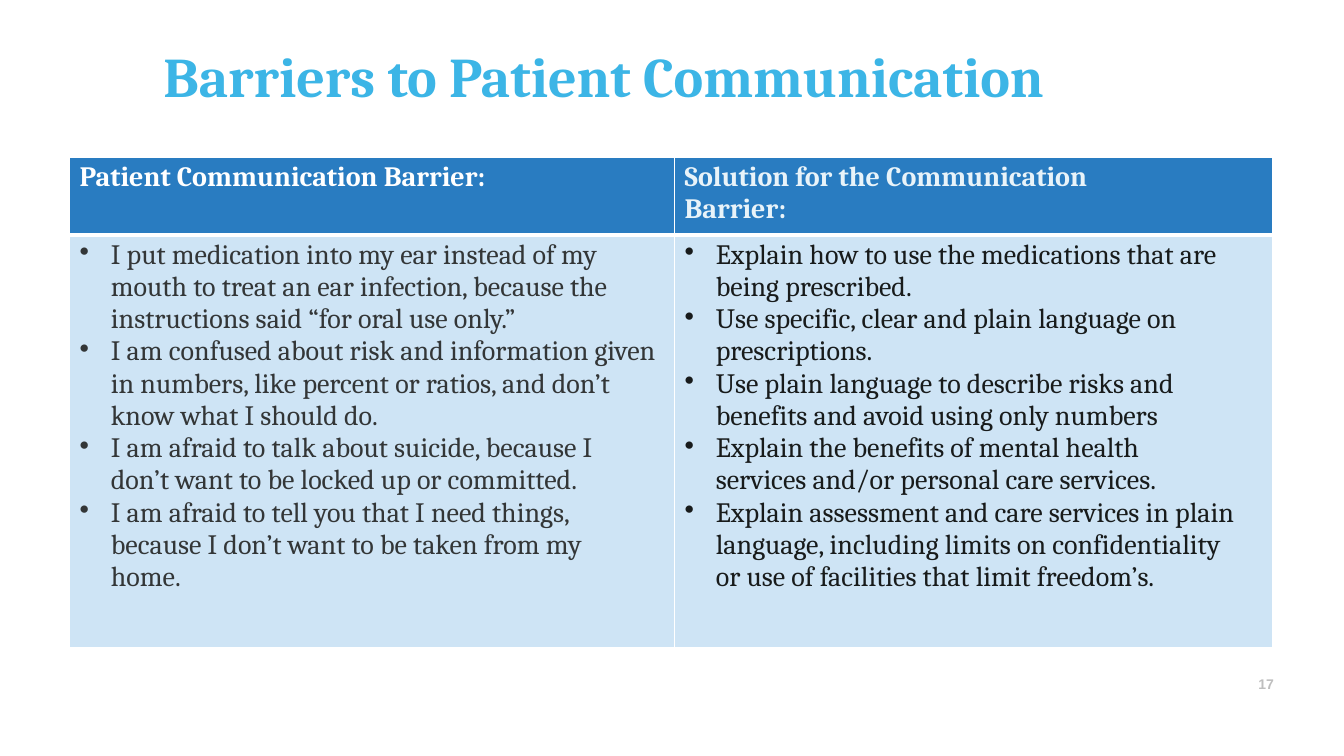
from pptx import Presentation
from pptx.dml.color import RGBColor as RGB
from pptx.oxml import parse_xml
from pptx.oxml.ns import nsdecls
from pptx.util import Inches, Pt

COLORS = {
    "title": "3CB5E6",
    "header": "297CC1",
    "body": "CEE4F5",
    "white": "FFFFFF",
    "pale": "E8F3F9",
    "barrier": "333637",
    "solution": "181B1B",
    "number": "BEBEBE",
}

BARRIERS = [
    ("I put medication into my ear instead of my mouth to treat an ear infection, "
     "because the instructions said “for oral use only.”", True, 0.3),
    ("I am confused about risk and information given in numbers, like percent or "
     "ratios, and don’t know what I should do.", True, 0.1),
    ("I am afraid to talk about suicide, because I don’t want to be locked up or "
     "committed.", True, 0.3),
    ("I am afraid to tell you that I need things, because I don’t want to be taken "
     "from my home.", True, 0.3),
]
SOLUTIONS = [
    ("Explain how to use the medications that are", True, 0),
    ("being prescribed.", False, 0),
    ("Use specific, clear and plain language on prescriptions.", True, 0.3),
    ("Use plain language to describe risks and", True, 0),
    ("benefits and avoid using only numbers", False, 0),
    ("Explain the benefits of mental health services and/or personal care services.",
     True, 0.5),
    ("Explain assessment and care services in plain language, including limits on "
     "confidentiality or use of facilities that limit freedom’s.", True, 0.3),
]


class SlideBuilder:
    font = "Cambria"
    text_indent = 0.41
    bullet_offset = -0.31

    def __init__(self, presentation):
        self.slide = presentation.slides.add_slide(presentation.slide_layouts[6])

    def run(self, paragraph, text, size, color, bold=False, font=None):
        run = paragraph.add_run()
        run.text = text
        run.font.name = font or self.font
        run.font.size = Pt(size)
        run.font.bold = bold
        run.font.color.rgb = RGB.from_string(COLORS[color])

    def indent(self, paragraph, left, right=0, bullet=False):
        properties = paragraph._p.get_or_add_pPr()
        properties.set("marL", str(Inches(left)))
        properties.set("marR", str(Inches(right)))
        properties.set("indent", str(Inches(self.bullet_offset if bullet else 0)))
        if bullet:
            properties.append(parse_xml(f'<a:buChar {nsdecls("a")} char="•"/>'))

    def text(self, text, box, inset_top, left, size, color, font=None):
        shape = self.slide.shapes.add_textbox(*map(Inches, box))
        frame = shape.text_frame
        frame.word_wrap = True
        frame.margin_left = frame.margin_right = frame.margin_bottom = 0
        frame.margin_top = Inches(inset_top)
        paragraph = frame.paragraphs[0]
        self.indent(paragraph, left)
        self.run(paragraph, text, size, color, True, font)

    def table(self, box, widths, heights):
        table = self.slide.shapes.add_table(
            len(heights), len(widths), *map(Inches, box)).table
        for column, width in zip(table.columns, widths):
            column.width = Inches(width)
        for row, height in zip(table.rows, heights):
            row.height = Inches(height)
        return table

    def borders(self, cell, top, bottom):
        properties = cell._tc.get_or_add_tcPr()
        sides = (("L", 1), ("R", 1), ("T", top), ("B", bottom))
        for position, (side, width) in enumerate(sides):
            properties.insert(position, parse_xml(
                f'<a:ln{side} {nsdecls("a")} w="{Pt(width)}"><a:solidFill>'
                f'<a:srgbClr val="{COLORS["white"]}"/></a:solidFill></a:ln{side}>'))

    def cell(self, cell, fill, top, bottom):
        cell.margin_left = cell.margin_right = cell.margin_bottom = 0
        cell.margin_top = Inches(0.04)
        cell.fill.solid()
        cell.fill.fore_color.rgb = RGB.from_string(COLORS[fill])
        self.borders(cell, top, bottom)

    def header(self, cell, text, color, right):
        self.cell(cell, "header", 1, 3)
        paragraph = cell.text_frame.paragraphs[0]
        self.indent(paragraph, 0.1, right)
        self.run(paragraph, text, 20, color, True)

    def bullets(self, cell, items, color):
        self.cell(cell, "body", 3, 1)
        frame = cell.text_frame
        for position, (text, bullet, right) in enumerate(items):
            paragraph = frame.add_paragraph() if position else frame.paragraphs[0]
            self.indent(paragraph, self.text_indent, right, bullet)
            self.run(paragraph, text, 20, color)


def main():
    presentation = Presentation()
    presentation.slide_width = Inches(13.33)
    presentation.slide_height = Inches(7.5)
    builder = SlideBuilder(presentation)
    builder.text("Barriers to Patient Communication", (1.57, 0.22, 10.19, 1.1),
                 0.19, 0.05, 40, "title")
    builder.text("17", (12.44, 6.7, 0.25, 0.18), 0, 0.04, 10, "number", "Arial")
    table = builder.table((0.69, 1.56, 11.93, 4.87), (6, 5.93), (0.77, 4.1))
    builder.header(table.cell(0, 0), "Patient Communication Barrier:", "white", 0)
    builder.header(table.cell(0, 1), "Solution for the Communication Barrier:", "pale", 1)
    builder.bullets(table.cell(1, 0), BARRIERS, "barrier")
    builder.bullets(table.cell(1, 1), SOLUTIONS, "solution")
    presentation.save("out.pptx")


if __name__ == "__main__":
    main()
